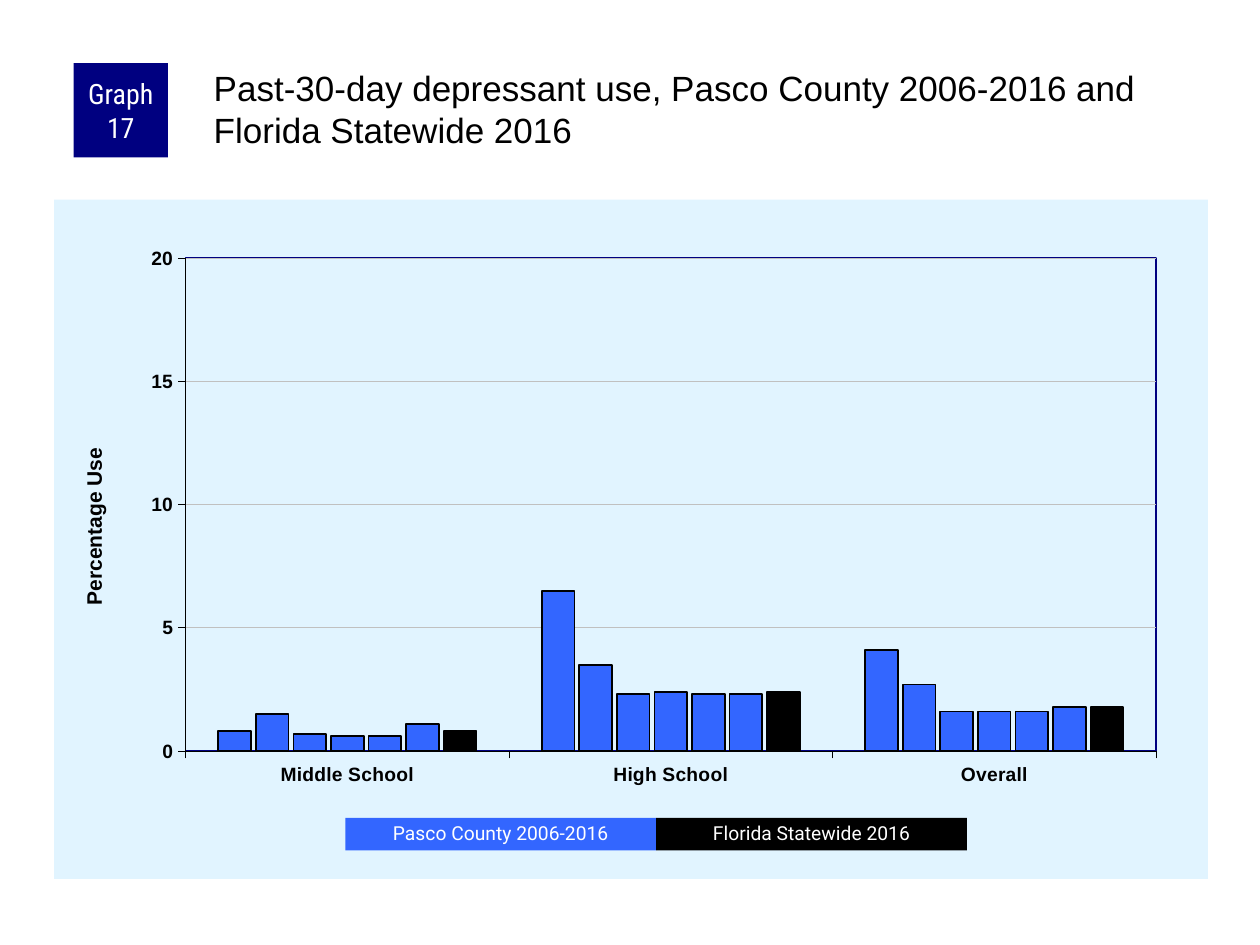
from dataclasses import dataclass

from lxml.etree import SubElement
from pptx import Presentation
from pptx.chart.data import CategoryChartData
from pptx.dml.color import RGBColor
from pptx.enum.chart import XL_CHART_TYPE as ChartType, XL_TICK_MARK as TickMark
from pptx.enum.shapes import MSO_SHAPE as Shape
from pptx.enum.text import MSO_ANCHOR as Anchor, PP_ALIGN as Align
from pptx.oxml import parse_xml
from pptx.oxml.ns import nsdecls, qn
from pptx.util import Inches, Pt


@dataclass(frozen=True)
class Theme:
    navy: str = "000080"
    blue: str = "3366FF"
    black: str = "000000"
    white: str = "FFFFFF"
    panel: str = "E1F4FF"
    grid: str = "C0C0C0"
    body_font: str = "Arial"
    badge_font: str = "Roboto Condensed"
    legend_font: str = "Roboto"
    title_size: float = 20
    badge_size: float = 16
    axis_title_size: float = 12
    label_size: float = 11


def style_font(font, name, size, color, bold=False):
    font.name, font.size, font.bold = name, Pt(size), bold
    font.color.rgb = RGBColor.from_string(color)


def write(frame, text, *, font, size, color, bold=False, align=Align.LEFT,
          anchor=Anchor.TOP, insets=None, spacing=None):
    frame.word_wrap = True
    frame.vertical_anchor = anchor
    if insets:
        (frame.margin_left, frame.margin_top,
         frame.margin_right, frame.margin_bottom) = map(Inches, insets)
    paragraph = frame.paragraphs[0]
    paragraph.alignment = align
    if spacing:
        paragraph.line_spacing = spacing
    run = paragraph.add_run()
    run.text = text
    style_font(run.font, font, size, color, bold)


def style_line(line, color, width):
    line.color.rgb = RGBColor.from_string(color)
    line.width = Pt(width)


def place(element, index, **layout):
    """Give a chart part a manual layout, in shares of the chart's size."""
    for old in element.findall(qn("c:layout")):
        element.remove(old)
    new = parse_xml(f"<c:layout {nsdecls('c')}><c:manualLayout/></c:layout>")
    for name, value in layout.items():
        SubElement(new[0], qn(f"c:{name}")).set("val", str(value))
    element.insert(index, new)


def area_format(fill="", line=""):
    return parse_xml(f"<c:spPr {nsdecls('c', 'a')}>{fill}<a:ln{line}</a:ln></c:spPr>")


def solid(color):
    return f'<a:solidFill><a:srgbClr val="{color}"/></a:solidFill>'


class GraphSlide:
    COLUMNS, ROWS = 120, 90

    def __init__(self, presentation, theme):
        self.theme = theme
        self.cell = (presentation.slide_width / self.COLUMNS,
                     presentation.slide_height / self.ROWS)
        self.slide = presentation.slides.add_slide(presentation.slide_layouts[6])

    def box(self, column, row, columns, rows):
        width, height = self.cell
        return [round(length) for length in
                (column * width, row * height, columns * width, rows * height)]

    def text(self, text, *position, **style):
        shape = self.slide.shapes.add_textbox(*self.box(*position))
        write(shape.text_frame, text, **style)

    def block(self, text, fill, *position, **style):
        shape = self.slide.shapes.add_shape(Shape.RECTANGLE, *self.box(*position))
        shape.shadow.inherit = False
        shape.fill.solid()
        shape.fill.fore_color.rgb = RGBColor.from_string(fill)
        shape.line.fill.background()
        write(shape.text_frame, text, color=self.theme.white,
              align=Align.CENTER, anchor=Anchor.MIDDLE, **style)

    def column_chart(self, categories, rows, colors, axis_title, *position):
        theme = self.theme
        data = CategoryChartData()
        data.categories = categories
        for number, values in enumerate(rows, 1):
            data.add_series(f"Series {number}", values)
        chart = self.slide.shapes.add_chart(
            ChartType.COLUMN_CLUSTERED, *self.box(*position), data).chart
        chart.has_legend = chart.has_title = False
        style_font(chart.font, theme.body_font, 8, theme.black)

        # Columns
        plot = chart.plots[0]
        plot.vary_by_categories = False
        plot.gap_width, plot.overlap = 200, -15
        for series, color in zip(plot.series, colors):
            series.format.fill.solid()
            series.format.fill.fore_color.rgb = RGBColor.from_string(color)
            style_line(series.format.line, theme.black, 1)

        # Axes
        for axis in (chart.category_axis, chart.value_axis):
            axis.major_tick_mark, axis.minor_tick_mark = TickMark.OUTSIDE, TickMark.NONE
            style_line(axis.format.line, theme.black, 0.25)
            style_font(axis.tick_labels.font, theme.body_font, theme.label_size,
                       theme.black, bold=True)
        axis = chart.value_axis
        axis.minimum_scale, axis.maximum_scale, axis.major_unit = 0, 20, 5
        axis.tick_labels.number_format = "0"
        axis.tick_labels.number_format_is_linked = False
        style_line(axis.major_gridlines.format.line, theme.grid, 0.25)
        write(axis.axis_title.text_frame, axis_title, font=theme.body_font,
              size=theme.axis_title_size, color=theme.black, bold=True,
              align=Align.CENTER)
        place(axis.axis_title.element, 1, xMode="edge", yMode="edge", x=0.02, y=0.36)

        # Panel and plot frame
        plot_area = chart.element.find(".//" + qn("c:plotArea"))
        place(plot_area, 0, layoutTarget="inner", xMode="edge", yMode="edge",
              x=0.114, y=0.086, w=0.841, h=0.726)
        plot_area.append(area_format("<a:noFill/>", f' w="{Pt(1)}">' + solid(theme.navy)))
        chart.element.find(qn("c:chart")).addnext(
            area_format(solid(theme.panel), "><a:noFill/>"))


def main():
    theme = Theme()
    presentation = Presentation()
    presentation.slide_width, presentation.slide_height = Inches(10), Inches(7.5)
    graph = GraphSlide(presentation, theme)

    # Chart: one row per survey, the last one statewide
    surveys = [(0.8, 6.5, 4.1), (1.5, 3.5, 2.7), (0.7, 2.3, 1.6), (0.6, 2.4, 1.6),
               (0.6, 2.3, 1.6), (1.1, 2.3, 1.8), (0.8, 2.4, 1.8)]
    colors = [theme.blue] * (len(surveys) - 1) + [theme.black]
    graph.column_chart(["Middle School", "High School", "Overall"], surveys, colors,
                       "Percentage Use", 5.15, 19, 109.9, 64.7)

    # Heading
    graph.block("Graph 17", theme.navy, 7, 6, 9, 9, font=theme.badge_font,
                size=theme.badge_size, insets=(0.05, 0, 0.05, 0))
    graph.text("Past-30-day depressant use, Pasco County 2006-2016 and "
               "Florida Statewide 2016", 20, 6, 95, 10, font=theme.body_font,
               size=theme.title_size, color=theme.black, insets=(0.03, 0.03, 0, 0))

    # Legend
    left, width = 32.9, 29.6
    legend = [("Pasco County 2006-2016", theme.blue),
              ("Florida Statewide 2016", theme.black)]
    for index, (label, color) in enumerate(legend):
        graph.block(label, color, left + index * width, 77.9, width, 3.1,
                    font=theme.legend_font, size=theme.label_size, spacing=0.9)

    presentation.save("out.pptx")


if __name__ == "__main__":
    main()
